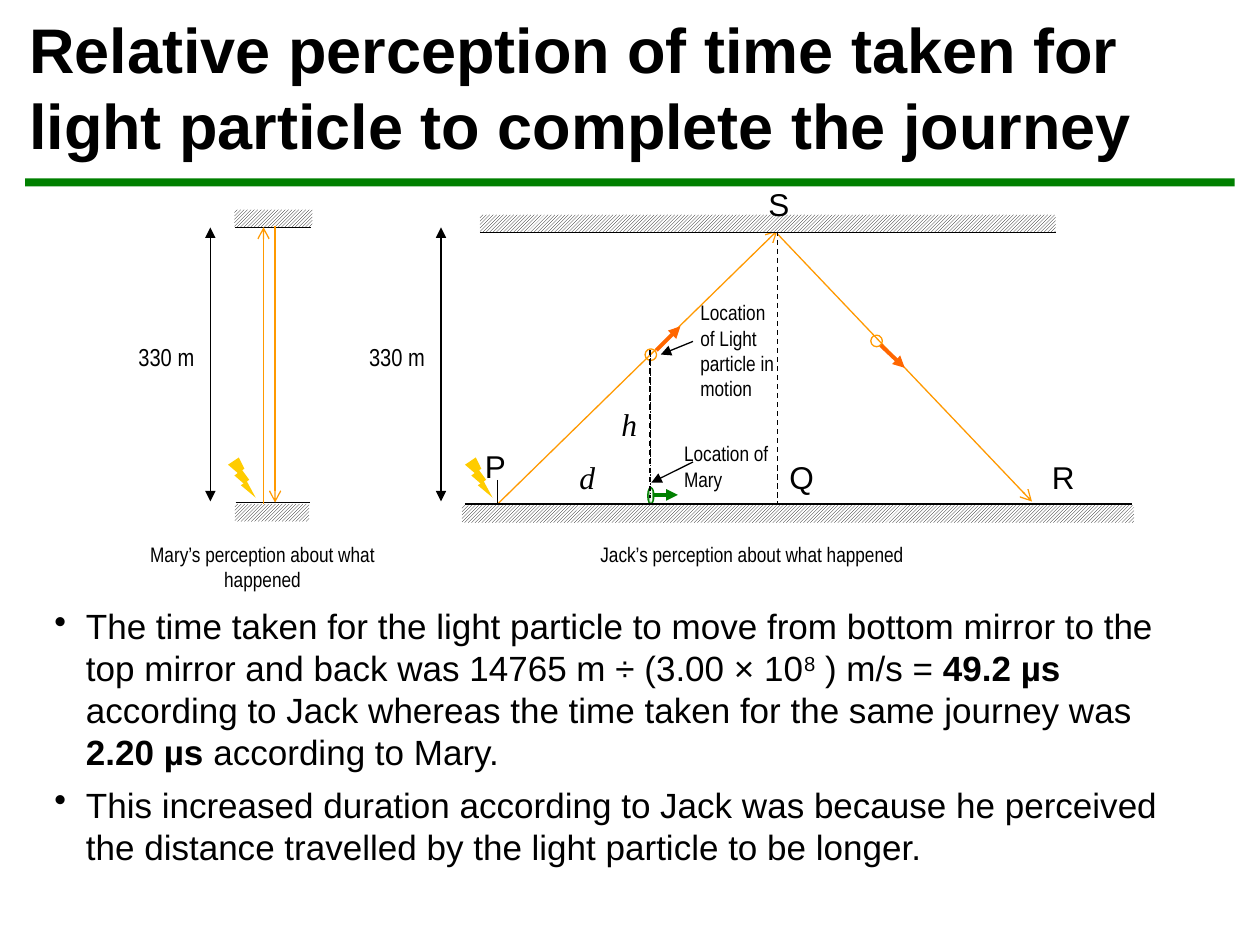
from dataclasses import dataclass

from lxml.etree import SubElement
from pptx import Presentation
from pptx.dml.color import RGBColor as Rgb
from pptx.enum.dml import MSO_LINE_DASH_STYLE as Dash, MSO_PATTERN_TYPE as Pattern
from pptx.enum.shapes import MSO_CONNECTOR as Connector, MSO_SHAPE as Preset
from pptx.enum.text import MSO_ANCHOR as Anchor, PP_ALIGN as Align
from pptx.oxml.ns import qn
from pptx.util import Pt


@dataclass(frozen=True)
class Theme:
    """Colours, fonts and type sizes of the slide."""
    black: Rgb = Rgb(0, 0, 0)
    white: Rgb = Rgb(255, 255, 255)
    green: Rgb = Rgb(0, 128, 0)
    light: Rgb = Rgb(255, 153, 0)
    motion: Rgb = Rgb(255, 102, 0)
    flash: Rgb = Rgb(255, 204, 0)
    sans: str = "Arial"
    narrow: str = "Arial Narrow"
    serif: str = "Times New Roman"
    title: int = 36
    body: int = 20
    symbol: int = 18
    measure: int = 14
    note: int = 12


THEME = Theme()
TITLE = {"name": THEME.sans, "size": Pt(THEME.title), "bold": True}
BODY = {"name": THEME.sans, "size": Pt(THEME.body)}
POINT = {"name": THEME.sans, "size": Pt(THEME.symbol)}
VARIABLE = {"name": THEME.serif, "size": Pt(THEME.symbol), "italic": True}
MEASURE = {"name": THEME.narrow, "size": Pt(THEME.measure)}
NOTE = {"name": THEME.narrow, "size": Pt(THEME.note)}


def set_values(target, values):
    """Set every attribute named in a dict of format values."""
    for name, value in values.items():
        setattr(target, name, value)


def add_run(paragraph, text, font, raised=False):
    """Append a formatted run, optionally as a superscript."""
    run = paragraph.add_run()
    run.text = text
    set_values(run.font, font)
    run.font.color.rgb = THEME.black
    if raised:
        run._r.get_or_add_rPr().set("baseline", "30000")


def add_text_frame(slide, box, anchor=Anchor.TOP):
    """Add a wrapping text box and return its frame."""
    frame = slide.shapes.add_textbox(*map(Pt, box)).text_frame
    set_values(frame, {"word_wrap": True, "vertical_anchor": anchor})
    return frame


def add_label(slide, text, box, font, align=Align.LEFT, anchor=Anchor.TOP):
    """Add a one-paragraph text box."""
    paragraph = add_text_frame(slide, box, anchor).paragraphs[0]
    paragraph.alignment = align
    add_run(paragraph, text, font)


def add_bullets(slide, box, items):
    """Add bulleted paragraphs made of (text, style) runs."""
    frame = add_text_frame(slide, box)
    for index, runs in enumerate(items):
        paragraph = frame.add_paragraph() if index else frame.paragraphs[0]
        if index:
            paragraph.space_before = Pt(6)
        properties = paragraph._p.get_or_add_pPr()
        properties.set("marL", str(Pt(18)))
        properties.set("indent", str(Pt(-18)))
        SubElement(properties, qn("a:buChar"), char="•")
        for text, style in runs:
            add_run(paragraph, text, {**BODY, "bold": style == "bold"}, style == "raised")


def add_preset(slide, preset, box, fill=None, line=None):
    """Add a preset shape with an optional solid fill and outline."""
    shape = slide.shapes.add_shape(preset, *map(Pt, box))
    shape.shadow.inherit = False
    if fill is None:
        shape.fill.background()
    else:
        shape.fill.solid()
        shape.fill.fore_color.rgb = fill
    if line is None:
        shape.line.fill.background()
    else:
        shape.line.color.rgb = line
        shape.line.width = Pt(0.75)
    return shape


def add_line(slide, start, end, color=THEME.black, width=0.75, dash=None, head=None, tail=None):
    """Add a straight line with optional dashes and arrowheads."""
    connector = slide.shapes.add_connector(Connector.STRAIGHT, *map(Pt, (*start, *end)))
    connector.line.color.rgb = color
    set_values(connector.line, {"width": Pt(width), "dash_style": dash})
    outline = connector.line._get_or_add_ln()
    for tag, kind in (("a:headEnd", head), ("a:tailEnd", tail)):
        if kind:
            SubElement(outline, qn(tag), type=kind)
    SubElement(connector.element.spPr, qn("a:effectLst"))


def add_mirror(slide, box, surface):
    """Add a hatched mirror and the line of its reflecting surface."""
    hatch = add_preset(slide, Preset.RECTANGLE, box, THEME.white)
    hatch.fill.patterned()
    hatch.fill.pattern = Pattern.LIGHT_UPWARD_DIAGONAL
    hatch.fill.fore_color.rgb = THEME.black
    hatch.fill.back_color.rgb = THEME.white
    left, right, level = surface
    add_line(slide, (left, level), (right, level))


def add_mary(slide):
    """Add the small ellipse that marks Mary, shaded from its centre."""
    mary = add_preset(slide, Preset.OVAL, (370.1, 278.6, 3.6, 9.4), THEME.white, THEME.green)
    mary.fill.gradient()
    for stop, color, position in zip(mary.fill.gradient_stops, (THEME.white, THEME.green), (0, 1)):
        stop.color.rgb = color
        stop.position = position
    gradient = mary.element.spPr.find(qn("a:gradFill"))
    gradient.remove(gradient.find(qn("a:lin")))
    path = SubElement(gradient, qn("a:path"), path="shape")
    SubElement(path, qn("a:fillToRect"), l="50000", t="50000", r="50000", b="50000")


def add_height(slide, left):
    """Add the flash and the 330 m measure of one view."""
    add_line(slide, (left, 130), (left, 286.5), head="triangle", tail="triangle")
    add_label(slide, "330 m", (left - 48.2, 192, 50.4, 41), MEASURE)


def add_mary_view(slide):
    """Draw the light going straight up and down."""
    add_mirror(slide, (133.9, 119.8, 44.6, 10), (134.3, 177.8, 129.9))
    add_mirror(slide, (134.2, 288, 42.5, 10), (134.6, 177, 287.2))
    add_line(slide, (150.6, 288), (150.6, 129.8), THEME.light, tail="arrow")
    add_line(slide, (157.2, 129.2), (157.2, 287.2), THEME.light, tail="arrow")
    add_preset(slide, Preset.LIGHTNING_BOLT, (130.3, 261.4, 15.8, 23), THEME.flash)
    add_height(slide, 120.2)
    add_label(slide, "Mary’s perception about what happened", (78, 306, 144, 45), NOTE, Align.CENTER)


def add_jack_view(slide):
    """Draw the slanted path of the light seen by Jack."""
    add_line(slide, (284.4, 288), (444.2, 131.8), THEME.light, tail="arrow")
    add_line(slide, (444.2, 133.6), (589.7, 286.6), THEME.light, tail="arrow")
    for left, top in ((368.6, 199.4), (497.6, 191.5)):
        add_preset(slide, Preset.OVAL, (left, top, 6.6, 6.6), line=THEME.light)
    add_mary(slide)
    for start, end, color in (
        ((375.1, 200.2), (388.8, 186.5), THEME.motion),
        ((503.3, 197.3), (517, 210.2), THEME.motion),
        ((373.7, 282.8), (387.4, 282.8), THEME.green),
    ):
        add_line(slide, start, end, color, 2.25, tail="triangle")
    for left, top, bottom, width in (
        (371.5, 203, 282.2, 0.25), (371.5, 200.2, 284.4, 0.75), (444.2, 131.8, 288, 0.75),
    ):
        add_line(slide, (left, top), (left, bottom), width=width, dash=Dash.DASH)
    add_label(slide, "Location of Light particle in motion", (393.1, 167.8, 56.9, 60), NOTE)
    add_label(slide, "Location of Mary", (383.8, 248.4, 68.4, 33), NOTE)
    for start, end in (((396, 195.1), (377.6, 202.6)), ((396, 264), (372.2, 275.8))):
        add_line(slide, start, end, tail="triangle")
    add_height(slide, 252)
    add_line(slide, (284.4, 274.3), (284.4, 295.9))
    add_preset(slide, Preset.LIGHTNING_BOLT, (265.7, 261.4, 15.8, 23), THEME.flash)
    add_mirror(slide, (274.3, 122.7, 329, 10), (274.3, 603.4, 132.8))
    add_mirror(slide, (264, 288.7, 384, 10), (265.7, 646.6, 288))
    for text, left, top, font in (
        ("P", 270, 252, POINT), ("Q", 444, 258, POINT), ("R", 594, 258, POINT),
        ("S", 432, 102, POINT), ("h", 348, 228, VARIABLE), ("d", 324, 258, VARIABLE),
    ):
        add_label(slide, text, (left, top, 30, 29), font)
    add_label(slide, "Jack’s perception about what happened", (336, 306, 342, 24), NOTE)


def main():
    """Build the slide and save it."""
    presentation = Presentation()
    set_values(presentation, {"slide_width": Pt(720), "slide_height": Pt(540)})
    slide = presentation.slides.add_slide(presentation.slide_layouts[6])
    add_preset(slide, Preset.RECTANGLE, (14.4, 102, 691.2, 4.5), THEME.green)
    add_label(slide, "Relative perception of time taken for light particle to complete the journey",
              (9.6, 12, 702, 84), TITLE, anchor=Anchor.BOTTOM)
    add_bullets(slide, (24, 342, 660, 162), (
        (("The time taken for the light particle to move from bottom mirror to the top mirror "
          "and back was 14765 m ÷ (3.00 × 10", None), ("8", "raised"), (" ) m/s = ", None),
         ("49.2 µs ", "bold"),
         ("according to Jack whereas the time taken for the same journey was ", None),
         ("2.20 µs ", "bold"), ("according to Mary.", None)),
        (("This increased duration according to Jack was because he perceived the distance "
          "travelled by the light particle to be longer.", None),),
    ))
    add_mary_view(slide)
    add_jack_view(slide)
    presentation.save("out.pptx")


if __name__ == "__main__":
    main()
